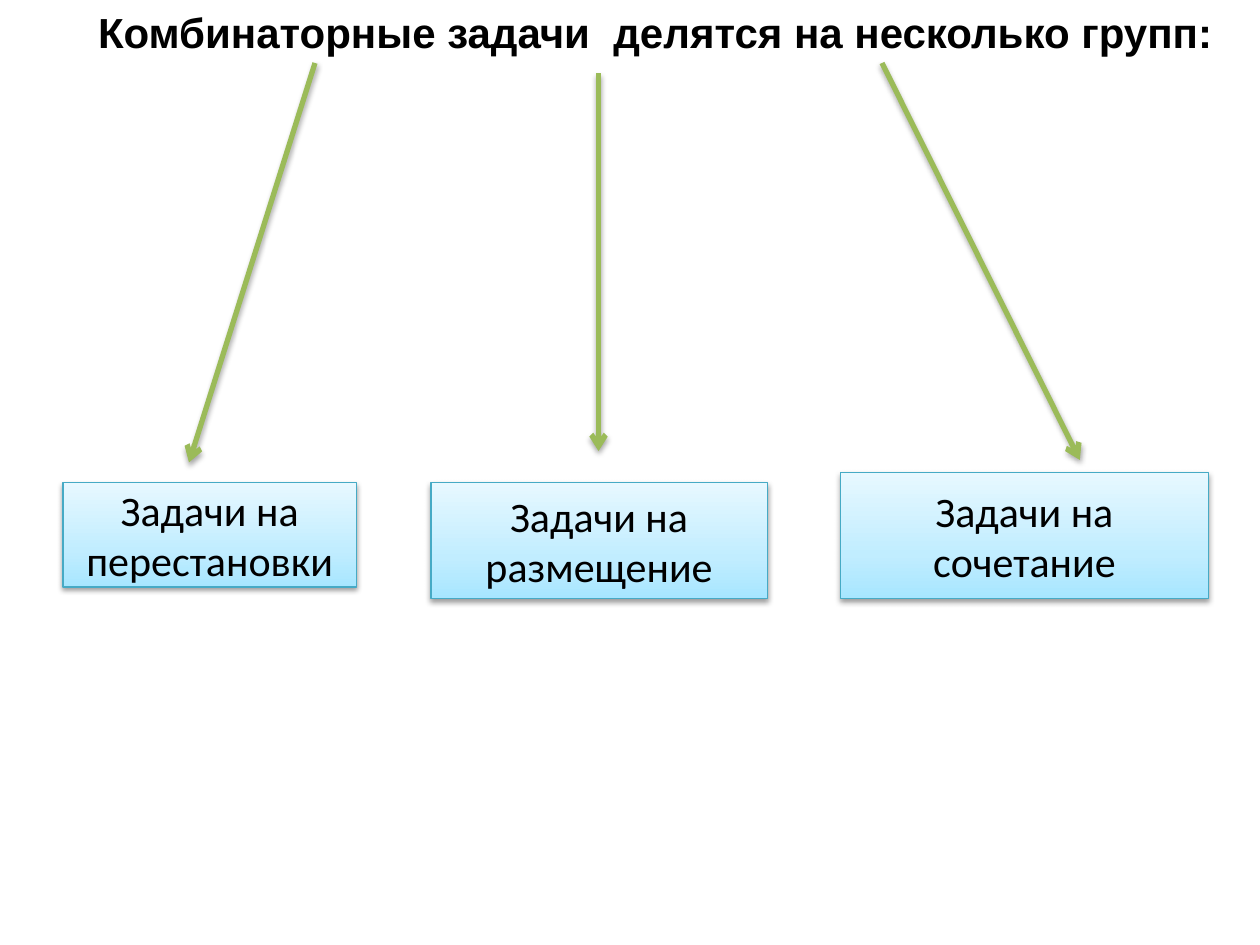
from lxml import etree
from pptx import Presentation
from pptx.dml.color import RGBColor
from pptx.enum.shapes import MSO_CONNECTOR as CONN, MSO_SHAPE as SHAPE
from pptx.enum.text import MSO_ANCHOR as ANCHOR, PP_ALIGN as ALIGN
from pptx.oxml import parse_xml
from pptx.oxml.ns import nsdecls, qn
from pptx.util import Inches, Pt


def rgb(value):
    return RGBColor.from_string(value)


class Deck:
    TEXT, BORDER, ARROW = "000000", "46AAC5", "9BBB59"
    STOPS = [(0, "A7E6FF"), (35, "C1EDFF"), (100, "E7F8FF")]

    def __init__(self, width, height):
        self.prs = Presentation()
        self.prs.slide_width, self.prs.slide_height = Inches(width), Inches(height)
        self.s = self.prs.slides.add_slide(self.prs.slide_layouts[6])

    def add_text(self, p, text, font, bold=False):
        r = p.add_run()
        r.text = text
        r.font.name, r.font.size, r.font.bold = font, Pt(24), bold
        r.font.color.rgb = rgb(self.TEXT)

    def shadow(self, sp, distance, opacity):
        # Soft shadow straight below the element
        sp._element.spPr.append(parse_xml(
            f'<a:effectLst {nsdecls("a")}><a:outerShdw blurRad="{Pt(3.15)}" '
            f'dist="{Pt(distance)}" dir="5400000" rotWithShape="0">'
            f'<a:srgbClr val="000000"><a:alpha val="{opacity * 1000}"/></a:srgbClr>'
            '</a:outerShdw></a:effectLst>'))

    def gradient(self, sp):
        sp.fill.gradient()
        sp.fill.gradient_angle = 90
        stops = sp._element.spPr.find(".//" + qn("a:gsLst"))
        stops.clear()
        for position, color in self.STOPS:
            gs = etree.SubElement(stops, qn("a:gs"), pos=str(position * 1000))
            etree.SubElement(gs, qn("a:srgbClr"), val=color)

    def title(self, text, x, y, w, h, indent):
        tf = self.s.shapes.add_textbox(*map(Inches, (x, y, w, h))).text_frame
        tf.word_wrap = True
        tf.vertical_anchor = ANCHOR.MIDDLE
        p = tf.paragraphs[0]
        p._p.get_or_add_pPr().set("indent", str(Inches(indent)))
        self.add_text(p, text, "Arial", bold=True)

    def box(self, text, x, y, w, h):
        sp = self.s.shapes.add_shape(SHAPE.RECTANGLE, *map(Inches, (x, y, w, h)))
        self.gradient(sp)
        sp.line.color.rgb = rgb(self.BORDER)
        sp.line.width = Pt(0.75)
        self.shadow(sp, 1.6, 38)
        tf = sp.text_frame
        tf.word_wrap = True
        tf.vertical_anchor = ANCHOR.MIDDLE
        p = tf.paragraphs[0]
        p.alignment = ALIGN.CENTER
        self.add_text(p, text, "Calibri")

    def arrow(self, x1, y1, x2, y2):
        cxn = self.s.shapes.add_connector(CONN.STRAIGHT, *map(Inches, (x1, y1, x2, y2)))
        cxn.line.color.rgb = rgb(self.ARROW)
        cxn.line.width = Pt(3)
        ln = cxn._element.spPr.find(qn("a:ln"))
        etree.SubElement(ln, qn("a:tailEnd"), type="arrow")
        self.shadow(cxn, 1.8, 35)


def main():
    deck = Deck(10, 7.5)

    # Heading
    deck.title("Комбинаторные задачи  делятся на несколько групп:", 0, 0, 10, 0.5, 0.68)

    # Groups of problems
    for group, *place in [("перестановки", 0.5, 3.83, 2.33, 0.83),
                          ("размещение", 3.42, 3.83, 2.67, 0.92),
                          ("сочетание", 6.67, 3.75, 2.92, 1)]:
        deck.box(f"Задачи на {group}", *place)

    # Arrows from the heading to the groups
    for ends in [(7, 0.5, 8.57, 3.65), (4.75, 0.58, 4.75, 3.58), (2.5, 0.5, 1.5, 3.67)]:
        deck.arrow(*ends)

    deck.prs.save("out.pptx")


if __name__ == "__main__":
    main()
